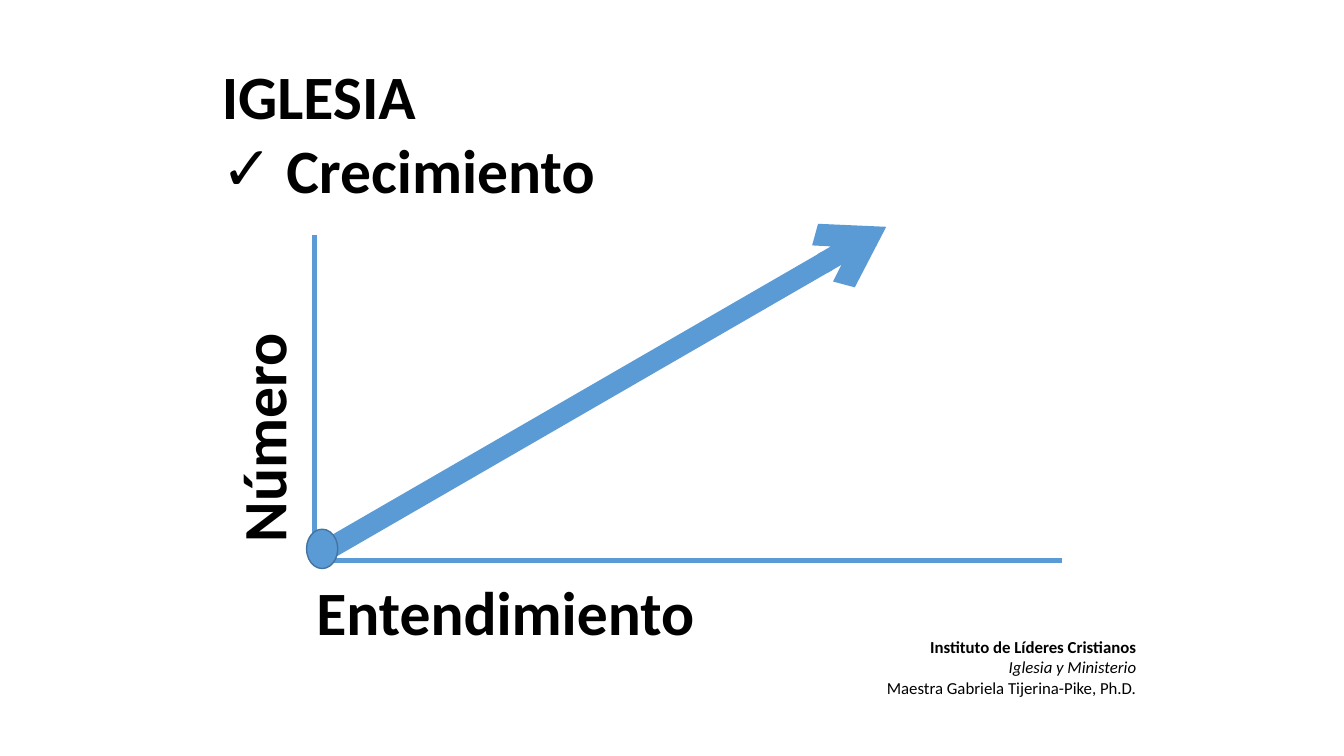
from dataclasses import dataclass
from lxml.etree import SubElement
from pptx import Presentation
from pptx.dml.color import RGBColor
from pptx.enum.shapes import MSO_CONNECTOR, MSO_SHAPE
from pptx.enum.text import MSO_ANCHOR, MSO_AUTO_SIZE, PP_ALIGN
from pptx.oxml.ns import qn
from pptx.util import Pt

SCALE = 9144


@dataclass(frozen=True)
class Theme:
    face: str = "Calibri"
    ink: RGBColor = RGBColor(0, 0, 0)
    blue: RGBColor = RGBColor(0x5B, 0x9B, 0xD5)
    edge: RGBColor = RGBColor(0x43, 0x73, 0x9E)
    large: int = 44
    small: int = 12
    thin: float = 1
    axis: float = 3.25
    thick: float = 15


def px(*sizes):
    return [size * SCALE for size in sizes]


def apply(target, values):
    for name, value in values.items():
        setattr(target, name, value)


class Board:
    def __init__(self, theme, deck):
        self.theme = theme
        self.slide = deck.slides.add_slide(deck.slide_layouts[1])
        self.shapes = self.slide.shapes

    def format(self, shape, box, lines, size, align=PP_ALIGN.LEFT):
        left, top, width, height = px(*box)
        apply(shape, {"left": left, "top": top, "width": width, "height": height})
        frame = shape.text_frame
        apply(frame, {"word_wrap": True, "auto_size": MSO_AUTO_SIZE.NONE,
                      "vertical_anchor": MSO_ANCHOR.TOP})
        frame.text = "\n".join(text for text, style in lines)
        base = {"name": self.theme.face, "size": Pt(size)}
        for para, (text, style) in zip(frame.paragraphs, lines):
            apply(para, {"alignment": align, "space_before": Pt(0), "line_spacing": 1.0})
            font = para.runs[0].font
            apply(font, {**base, **style})
            font.color.rgb = self.theme.ink

    def title(self, box, text):
        self.format(self.shapes.title, box, [(text, {"bold": True})], self.theme.large)

    def list(self, box, items, mark, indent):
        body = self.slide.placeholders[1]
        self.format(body, box, [(item, {"bold": True}) for item in items], self.theme.large)
        for para in body.text_frame.paragraphs:
            props = para._p.get_or_add_pPr()
            props.set("marL", str(indent * SCALE))
            props.set("indent", str(-indent * SCALE))
            SubElement(props, qn("a:buFont"), typeface=self.theme.face)
            SubElement(props, qn("a:buChar"), char=mark)

    def text(self, box, lines, size, align=PP_ALIGN.LEFT, turn=0):
        shape = self.shapes.add_textbox(*px(*box))
        self.format(shape, box, lines, size, align)
        shape.rotation = turn

    def line(self, start, end, weight, head=None):
        link = self.shapes.add_connector(MSO_CONNECTOR.STRAIGHT, *px(*start, *end))
        link.line.color.rgb = self.theme.blue
        link.line.width = Pt(weight)
        props = link._element.spPr
        if head:
            SubElement(props.find(qn("a:ln")), qn("a:tailEnd"), type=head)
        SubElement(props, qn("a:effectLst"))

    def dot(self, box):
        shape = self.shapes.add_shape(MSO_SHAPE.OVAL, *px(*box))
        shape.shadow.inherit = False
        shape.fill.solid()
        shape.fill.fore_color.rgb = self.theme.blue
        shape.line.color.rgb = self.theme.edge
        shape.line.width = Pt(self.theme.thin)


def main():
    deck = Presentation()
    width, height = px(1333, 750)
    apply(deck, {"slide_width": width, "slide_height": height})
    theme = Theme()
    board = Board(theme, deck)
    bold = {"bold": True}
    corner = (312, 556)

    board.text((761, 627, 376, 71), [
        ("Instituto de Líderes Cristianos", bold),
        ("Iglesia y Ministerio", {"italic": True}),
        ("Maestra Gabriela Tijerina-Pike, Ph.D.", {}),
    ], theme.small, PP_ALIGN.RIGHT)
    board.title((210, 52, 646, 84), "IGLESIA")
    board.list((210, 126, 646, 84), ["Crecimiento"], "✓", 64)
    board.line((312, 233), corner, theme.axis)
    board.line((1053, 556), corner, theme.axis)
    board.text((126, 372, 268, 84), [("Número", bold)], theme.large, turn=270)
    board.text((304, 564, 457, 84), [("Entendimiento", bold)], theme.large)
    board.line((320, 548), (879, 225), theme.thick, "arrow")
    board.dot((304, 525, 31, 39))
    deck.save("out.pptx")


if __name__ == "__main__":
    main()
